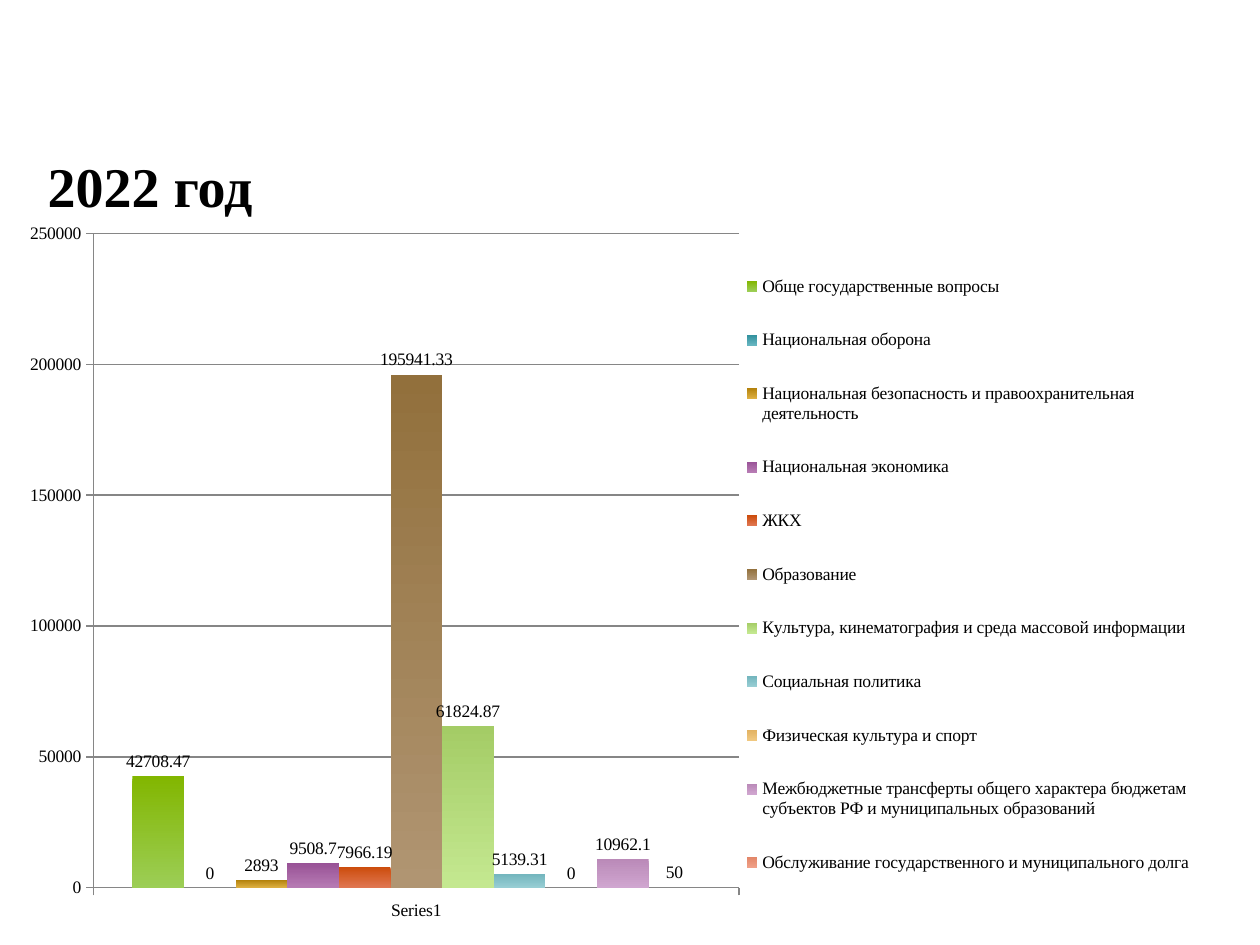
"""Build a slide with a column chart of budget spending for 2022."""
from lxml.etree import SubElement
from pptx import Presentation
from pptx.chart.data import CategoryChartData
from pptx.dml.color import RGBColor
from pptx.enum.chart import (XL_CHART_TYPE, XL_LABEL_POSITION,
                             XL_LEGEND_POSITION, XL_TICK_MARK)
from pptx.enum.text import MSO_ANCHOR, PP_ALIGN
from pptx.oxml.ns import qn
from pptx.util import Pt

FONT = "Times New Roman"
BLACK = RGBColor(0x00, 0x00, 0x00)
GRAY = RGBColor(0x86, 0x86, 0x86)
GREEN = RGBColor(0x82, 0xB6, 0x00), RGBColor(0x9C, 0xCE, 0x56)
TEAL = RGBColor(0x2F, 0x8F, 0x9C), RGBColor(0x66, 0xB5, 0xC0)
GOLD = RGBColor(0xB4, 0x82, 0x0C), RGBColor(0xDE, 0xB0, 0x42)
PURPLE = RGBColor(0x98, 0x52, 0x96), RGBColor(0xB7, 0x7B, 0xB4)
ORANGE = RGBColor(0xCC, 0x4C, 0x0C), RGBColor(0xE0, 0x77, 0x52)
BROWN = RGBColor(0x92, 0x70, 0x3C), RGBColor(0xB0, 0x95, 0x72)
LIME = RGBColor(0xA4, 0xCC, 0x66), RGBColor(0xC4, 0xE8, 0x90)
AQUA = RGBColor(0x74, 0xB6, 0xBE), RGBColor(0x98, 0xCE, 0xD4)
SAND = RGBColor(0xE2, 0xB2, 0x62), RGBColor(0xF0, 0xC8, 0x80)
LILAC = RGBColor(0xBA, 0x8A, 0xB8), RGBColor(0xD0, 0xA6, 0xD0)
CORAL = RGBColor(0xE2, 0x86, 0x68), RGBColor(0xF0, 0xA0, 0x88)

COSTS = [
    ("Обще государственные вопросы", 42708.47, GREEN),
    ("Национальная оборона", 0, TEAL),
    ("Национальная безопасность и правоохранительная деятельность", 2893, GOLD),
    ("Национальная экономика", 9508.7, PURPLE),
    ("ЖКХ", 7966.19, ORANGE),
    ("Образование", 195941.33, BROWN),
    ("Культура, кинематография и среда массовой информации", 61824.87, LIME),
    ("Социальная политика", 5139.31, AQUA),
    ("Физическая культура и спорт", 0, SAND),
    ("Межбюджетные трансферты общего характера бюджетам субъектов РФ "
     "и муниципальных образований", 10962.1, LILAC),
    ("Обслуживание государственного и муниципального долга", 50, CORAL),
]


def px(*sizes):
    """Turn pixel lengths into EMU."""
    return [round(size * 914400 / 126) for size in sizes]


def set_font(font, size, bold=False):
    """Set the common typeface, size and colour."""
    font.name, font.size, font.bold = FONT, Pt(size), bold
    font.color.rgb = BLACK


def add_title(slide, text, box):
    """Fill and place the title."""
    title = slide.shapes.title
    title.left, title.top, title.width, title.height = px(*box)
    frame = title.text_frame
    frame.text = text
    frame.vertical_anchor = MSO_ANCHOR.TOP
    line = frame.paragraphs[0]
    line.alignment = PP_ALIGN.LEFT
    set_font(line.runs[0].font, 32, True)


def set_place(node, spot, index, inner=False):
    """Give a chart part a manual layout in shares of the chart."""
    for old in node.findall(qn("c:layout")):
        node.remove(old)
    layout = SubElement(node, qn("c:layout"))
    node.insert(index, layout)
    manual = SubElement(layout, qn("c:manualLayout"))
    pairs = [("layoutTarget", "inner")] if inner else []
    pairs += [("xMode", "edge"), ("yMode", "edge")]
    pairs += zip("xywh", spot)
    for tag, value in pairs:
        SubElement(manual, qn(f"c:{tag}")).set("val", str(value))


def style_bar(bar, shades):
    """Shade a series from top to bottom and show its value."""
    fill = bar.format.fill
    fill.gradient()
    fill.gradient_angle = 270
    for stop, shade, place in zip(fill.gradient_stops, shades, (0, 1)):
        stop.color.rgb = shade
        stop.position = place
    labels = bar.data_labels
    labels.show_value = True
    labels.position = XL_LABEL_POSITION.OUTSIDE_END
    set_font(labels.font, 10)


def style_axis(axis):
    """Give an axis outer ticks and a thin gray line."""
    axis.major_tick_mark = XL_TICK_MARK.OUTSIDE
    axis.minor_tick_mark = XL_TICK_MARK.NONE
    axis.format.line.color.rgb = GRAY
    axis.format.line.width = Pt(0.75)
    set_font(axis.tick_labels.font, 10)


def add_legend(chart):
    """Place the legend on the right."""
    chart.has_legend = True
    legend = chart.legend
    legend.position = XL_LEGEND_POSITION.RIGHT
    legend.include_in_layout = False
    set_font(legend.font, 10)
    set_place(legend._element, (0.61, 0.04, 0.38, 0.93), 1)


def add_columns(slide, box):
    """Add the clustered column chart of costs."""
    data = CategoryChartData()
    data.categories = ["Series1"]
    for name, value, _ in COSTS:
        data.add_series(name, [value])
    kind = XL_CHART_TYPE.COLUMN_CLUSTERED
    chart = slide.shapes.add_chart(kind, *px(*box), data).chart
    chart.has_title = False
    set_font(chart.font, 10)
    plot = chart.plots[0]
    plot.gap_width, plot.overlap = 150, 0
    plot.vary_by_categories = False
    for bar, (_, _, shades) in zip(plot.series, COSTS):
        style_bar(bar, shades)
    for axis in (chart.category_axis, chart.value_axis):
        style_axis(axis)
    scale = chart.value_axis
    scale.minimum_scale, scale.maximum_scale = 0, 250000
    scale.major_unit = 50000
    scale.tick_labels.number_format = "General"
    scale.tick_labels.number_format_is_linked = False
    scale.has_major_gridlines = True
    scale.major_gridlines.format.line.color.rgb = GRAY
    area = chart._chartSpace.chart.plotArea
    set_place(area, (0.066, 0.027, 0.542, 0.917), 0, True)
    add_legend(chart)


def main():
    """Build and save the slide."""
    deck = Presentation()
    deck.slide_width, deck.slide_height = px(1260, 945)
    slide = deck.slides.add_slide(deck.slide_layouts[5])
    add_columns(slide, (15, 214, 1191, 714))
    add_title(slide, "2022 год", (35, 145, 367, 81))
    deck.save("out.pptx")


if __name__ == "__main__":
    main()
